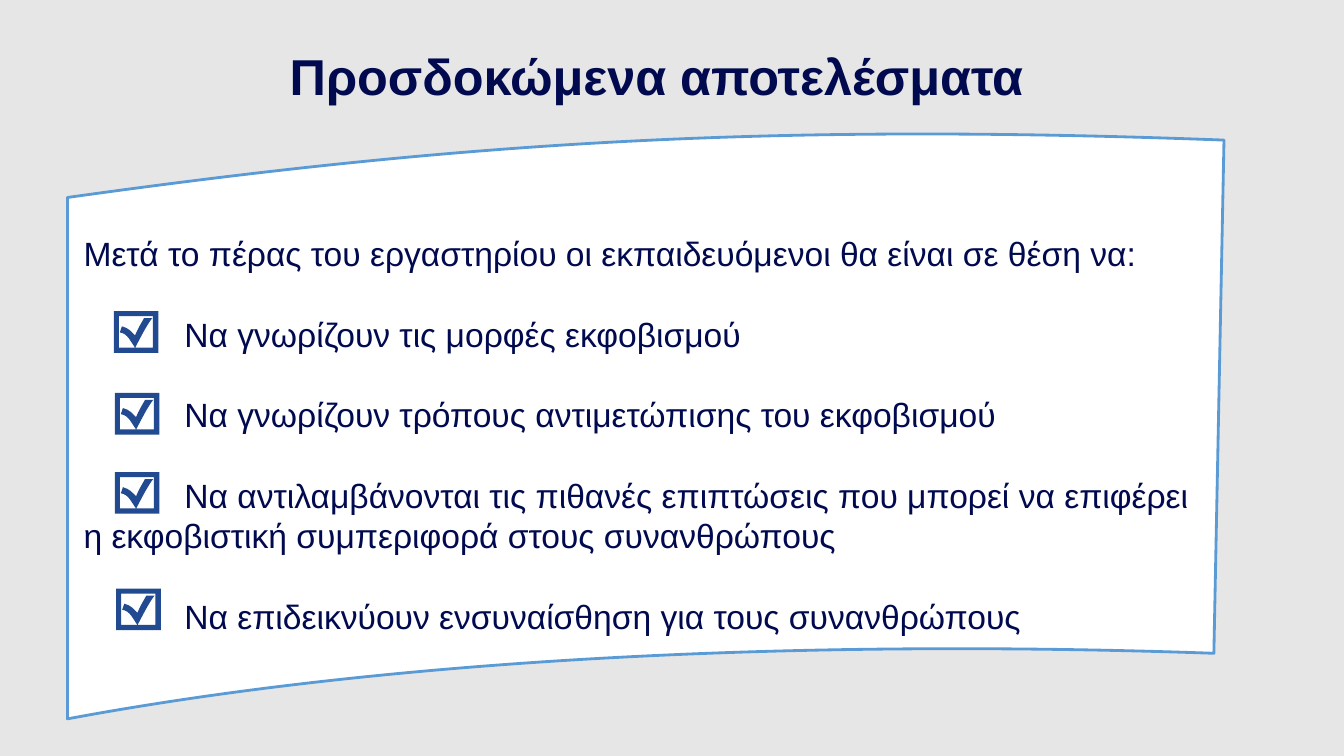
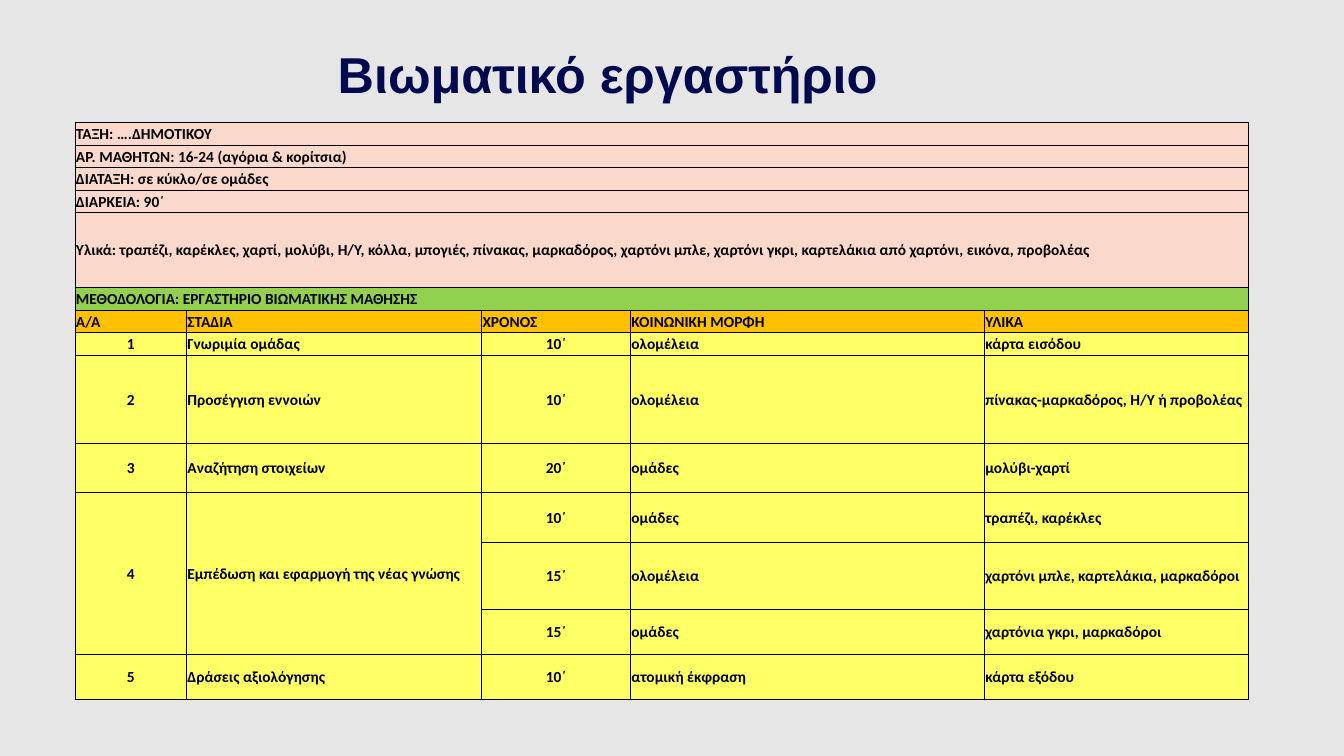
from lxml import etree
from pptx import Presentation
from pptx.dml.color import RGBColor
from pptx.enum.text import MSO_ANCHOR, PP_ALIGN
from pptx.oxml.ns import qn
from pptx.util import Pt

MIDDLE = MSO_ANCHOR.MIDDLE
CENTER, LEFT = PP_ALIGN.CENTER, PP_ALIGN.LEFT

COLORS = {
    "background": "E7E6E6", "navy": "010A4F", "white": "FFFFFF",
    "frame": "5A9BD5", "check": "224A90", "black": "000000",
    "pink": "FAD8CC", "green": "92D050", "orange": "FFC000", "yellow": "FFFF66",
}
HEADING_FONT, TABLE_FONT = "Arial", "Calibri"

# Outlines in points: (x, y) is a corner, six numbers are a Bezier curve
FRAME = [
    (48.2, 141.1), (331.2, 101.5, 547.9, 87.8, 874.3, 100.1),
    (867.1, 466.7), (579.6, 456.5, 285.1, 469.4, 48.2, 513.5),
]
CHECK_BORDER = [(0, 0), (31.9, 0), (31.9, 29.7), (0, 29.7)]
CHECK_INSIDE = [
    (3.6, 3.6), (3.6, 26), (15.2, 26),
    (12.2, 22.3, 10, 15.8, 4.3, 15.2), (5.8, 10.8),
    (10.8, 12.2, 12.2, 14.4, 15.2, 17.3),
    (17.3, 12.2, 18.8, 10, 21.6, 5), (27.4, 5),
    (23, 10.8, 18.8, 19.4, 15.3, 26), (28, 26), (28, 3.6),
]
CHECK_PLACES = [(81.3, 222.3), (82, 280.7), (82, 337.2), (83, 420.4)]

INTRO = "Μετά το πέρας του εργαστηρίου οι εκπαιδευόμενοι θα είναι σε θέση να:"
OUTCOMES = [
    "Να γνωρίζουν τις μορφές εκφοβισμού",
    "Να γνωρίζουν τρόπους αντιμετώπισης του εκφοβισμού",
    "Να αντιλαμβάνονται τις πιθανές επιπτώσεις που μπορεί να επιφέρει "
    "η εκφοβιστική συμπεριφορά στους συνανθρώπους",
    "Να επιδεικνύουν ενσυναίσθηση για τους συνανθρώπους",
]

COLUMN_WIDTHS = [79.6, 210.8, 106.4, 252.8, 188.4]
# Row height, fill, texts; a single text spans the whole row
PLAN = [
    (16.1, "pink", ["ΤΑΞΗ: ….ΔΗΜΟΤΙΚΟΥ"]),
    (16.1, "pink", ["ΑΡ. ΜΑΘΗΤΩΝ: 16-24 (αγόρια & κορίτσια)"]),
    (16.1, "pink", ["ΔΙΑΤΑΞΗ: σε κύκλο/σε ομάδες"]),
    (16.1, "pink", ["ΔΙΑΡΚΕΙΑ: 90΄"]),
    (53.8, "pink", ["Υλικά: τραπέζι, καρέκλες, χαρτί, μολύβι, Η/Υ, κόλλα, μπογιές, "
                    "πίνακας, μαρκαδόρος, χαρτόνι μπλε, χαρτόνι γκρι, "
                    "καρτελάκια από χαρτόνι, εικόνα, προβολέας"]),
    (16.1, "green", ["ΜΕΘΟΔΟΛΟΓΙA: ΕΡΓΑΣΤΗΡΙΟ ΒΙΩΜΑΤΙΚΗΣ ΜΑΘΗΣΗΣ"]),
    (16.1, "orange", ["Α/Α", "ΣΤΑΔΙΑ", "ΧΡΟΝΟΣ", "ΚΟΙΝΩΝΙΚΗ ΜΟΡΦΗ", "ΥΛΙΚΑ"]),
    (16.1, "yellow", ["1", "Γνωριμία ομάδας", "10΄", "ολομέλεια", "κάρτα εισόδου"]),
    (62.9, "yellow", ["2", "Προσέγγιση εννοιών", "10΄", "ολομέλεια",
                      "πίνακας-μαρκαδόρος, Η/Υ ή προβολέας"]),
    (35.3, "yellow", ["3", "Αναζήτηση στοιχείων", "20΄", "ομάδες", "μολύβι-χαρτί"]),
    (35.3, "yellow", ["4", "Εμπέδωση και εφαρμογή της νέας γνώσης", "10΄", "ομάδες",
                      "τραπέζι, καρέκλες"]),
    (48.2, "yellow", ["", "", "15΄", "ολομέλεια",
                      "χαρτόνι μπλε, καρτελάκια, μαρκαδόροι"]),
    (32.2, "yellow", ["", "", "15΄", "ομάδες", "χαρτόνια γκρι, μαρκαδόροι"]),
    (32.2, "yellow", ["5", "Δράσεις αξιολόγησης", "10΄", "ατομική έκφραση",
                      "κάρτα εξόδου"]),
]
STAGE_FOUR_ROWS = (10, 12)
CENTERED_COLUMNS = (0, 2)


def rgb(name):
    return RGBColor.from_string(COLORS[name])


def add_run(paragraph, text, size, color, font, bold=False):
    run = paragraph.add_run()
    run.text = text
    run.font.size = Pt(size)
    run.font.name = font
    run.font.bold = bold
    run.font.color.rgb = rgb(color)


def add_text_frame(slide, left, top, width, height):
    box = slide.shapes.add_textbox(Pt(left), Pt(top), Pt(width), Pt(height))
    frame = box.text_frame
    frame.word_wrap = True
    frame.vertical_anchor = MIDDLE
    return frame


def add_title(slide, text, left, top, width):
    paragraph = add_text_frame(slide, left, top, width, 56.9).paragraphs[0]
    paragraph.alignment = CENTER
    paragraph.line_spacing = 0.9
    add_run(paragraph, text, 36, "navy", HEADING_FONT, bold=True)


def bend_segments(shape, outlines, left, top):
    """Turn the straight segments that belong to curves into Bezier segments."""
    parts = [part for outline in outlines for part in outline[1:]]
    segments = list(shape._element.iter(qn("a:lnTo")))
    for part, segment in zip(parts, segments):
        if len(part) == 2:
            continue
        segment.tag = qn("a:cubicBezTo")
        controls = [part[0:2], part[2:4]]
        for position, (x, y) in enumerate(controls):
            point = etree.Element(qn("a:pt"), x=str(Pt(left + x) - shape.left),
                                  y=str(Pt(top + y) - shape.top))
            segment.insert(position, point)


def add_outline(slide, outlines, fill, line=None, left=0, top=0):
    contours = [[(Pt(left + part[-2]), Pt(top + part[-1])) for part in outline]
                for outline in outlines]
    builder = slide.shapes.build_freeform(*contours[0][0])
    for index, (start, *rest) in enumerate(contours):
        if index:
            builder.move_to(*start)
        # The builder closes without repeating the start point
        builder.add_line_segments(rest, close=False)
        builder._add_close()
    shape = builder.convert_to_shape()
    bend_segments(shape, outlines, left, top)
    shape.shadow.inherit = False
    shape.fill.solid()
    shape.fill.fore_color.rgb = rgb(fill)
    if line:
        shape.line.color.rgb = rgb(line)
        shape.line.width = Pt(2)
    else:
        shape.line.fill.background()


def add_outcomes(slide):
    frame = add_text_frame(slide, 52.6, 161.3, 823, 298)
    add_run(frame.paragraphs[0], INTRO, 24, "navy", HEADING_FONT)
    for outcome in OUTCOMES:
        paragraph = frame.add_paragraph()
        properties = paragraph._p.get_or_add_pPr()
        properties.set("marL", "0")
        properties.set("indent", str(Pt(72)))
        paragraph.space_before = Pt(28.8)
        add_run(paragraph, outcome, 24, "navy", HEADING_FONT)
    frame.margin_right = Pt(10)


def add_borders(cell):
    properties = cell._tc.get_or_add_tcPr()
    for side in ("a:lnL", "a:lnR", "a:lnT", "a:lnB"):
        border = etree.SubElement(properties, qn(side), w=str(Pt(0.5)))
        solid = etree.SubElement(border, qn("a:solidFill"))
        etree.SubElement(solid, qn("a:srgbClr"), val=COLORS["black"])


def style_cell(cell, fill):
    add_borders(cell)
    cell.fill.solid()
    cell.fill.fore_color.rgb = rgb(fill)
    cell.vertical_anchor = MIDDLE
    cell.margin_left = cell.margin_right = cell.margin_top = Pt(0.7)
    cell.margin_bottom = 0


def add_plan(slide):
    heights = [height for height, _, _ in PLAN]
    last_column = len(COLUMN_WIDTHS) - 1
    table = slide.shapes.add_table(
        len(PLAN), len(COLUMN_WIDTHS), Pt(53.6), Pt(87.5),
        Pt(sum(COLUMN_WIDTHS)), Pt(sum(heights))).table
    table.first_row = table.horz_banding = False
    for column, width in zip(table.columns, COLUMN_WIDTHS):
        column.width = Pt(width)
    for r, (height, fill, texts) in enumerate(PLAN):
        table.rows[r].height = Pt(height)
        for c in range(len(COLUMN_WIDTHS)):
            style_cell(table.cell(r, c), fill)
        for c, text in enumerate(texts):
            if text:
                paragraph = table.cell(r, c).text_frame.paragraphs[0]
                centered = fill == "yellow" and c in CENTERED_COLUMNS
                paragraph.alignment = CENTER if centered else LEFT
                add_run(paragraph, text, 11, "black", TABLE_FONT, bold=True)
        if len(texts) == 1:
            table.cell(r, 0).merge(table.cell(r, last_column))
    first, last = STAGE_FOUR_ROWS
    for c in (0, 1):
        table.cell(first, c).merge(table.cell(last, c))


def main():
    prs = Presentation()
    prs.slide_width, prs.slide_height = Pt(960), Pt(540)
    backdrop = prs.slide_master.background.fill
    backdrop.solid()
    backdrop.fore_color.rgb = rgb("background")
    blank = prs.slide_layouts[6]

    # Expected outcomes
    slide = prs.slides.add_slide(blank)
    add_outline(slide, [FRAME], "white", "frame")
    add_title(slide, "Προσδοκώμενα αποτελέσματα", 183.2, 28.1, 571.7)
    add_outcomes(slide)
    for left, top in CHECK_PLACES:
        add_outline(slide, [CHECK_BORDER, CHECK_INSIDE], "check", left=left, top=top)

    # Workshop plan
    slide = prs.slides.add_slide(blank)
    add_title(slide, "Βιωματικό εργαστήριο", 103, 26.6, 662.4)
    add_plan(slide)

    prs.save("out.pptx")


if __name__ == "__main__":
    main()
